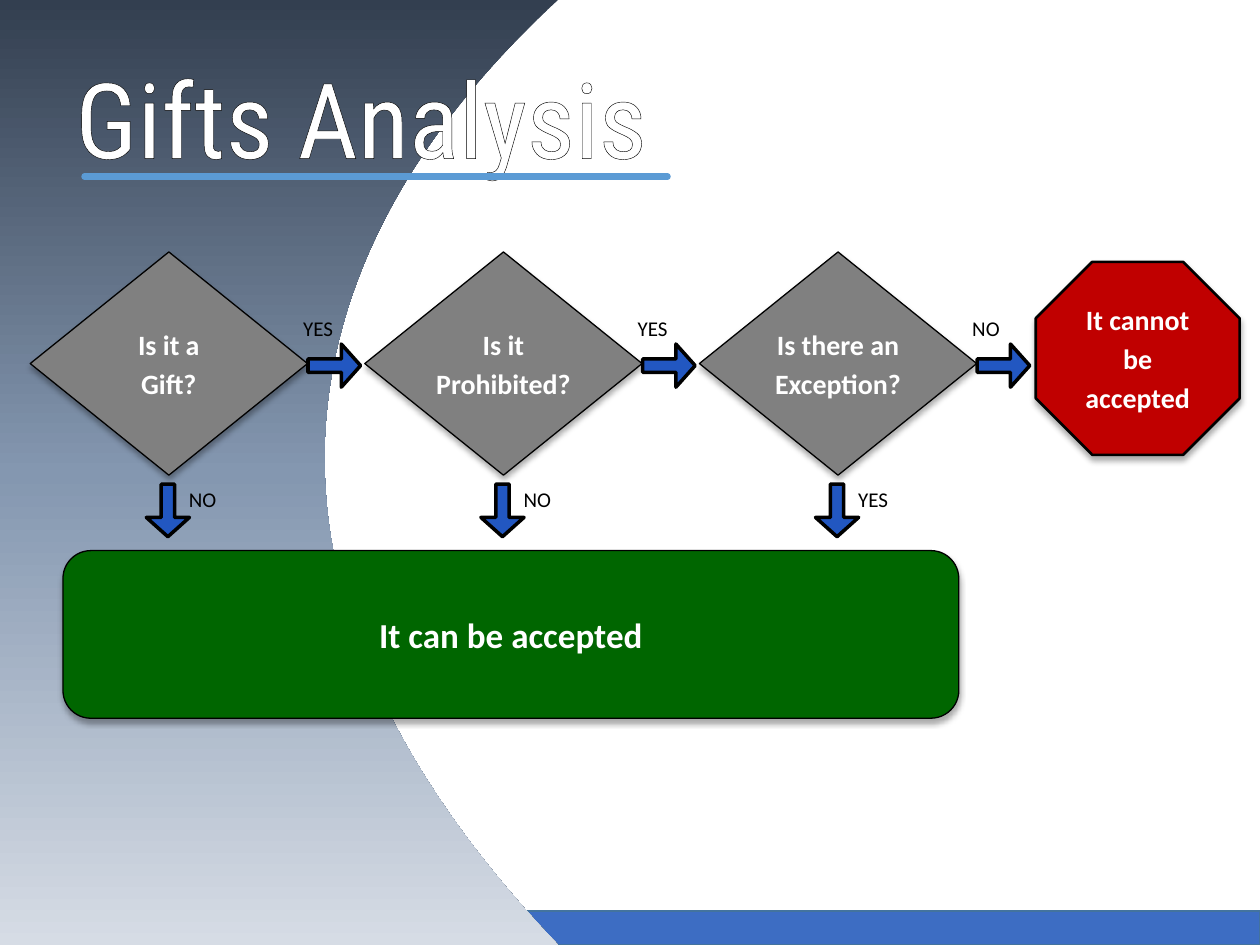
from dataclasses import dataclass

from lxml.etree import SubElement
from pptx import Presentation
from pptx.dml.color import RGBColor
from pptx.enum.shapes import MSO_CONNECTOR, MSO_SHAPE
from pptx.enum.text import MSO_ANCHOR, PP_ALIGN
from pptx.oxml import parse_xml
from pptx.oxml.ns import nsdecls, qn
from pptx.util import Cm, Pt


@dataclass(frozen=True)
class Theme:
    white: str = "FFFFFF"
    black: str = "000000"
    gray: str = "808080"
    red: str = "C00000"
    green: str = "006600"
    arrow: str = "2257C1"
    band: str = "3D6DC3"
    band_line: str = "43739E"
    rule: str = "5B9BD5"
    sweep: tuple = ((0, "333F50"), (50, "8497B0"), (100, "D6DCE5"))
    body_font: str = "Calibri"
    title_font: str = "Roboto Condensed"
    title: int = 60
    result: int = 20
    step: int = 16
    label: int = 12


T = Theme()
STEPS = [  # question, answer leading right, answer leading down
    ("Is it a\nGift?", "YES", "NO"),
    ("Is it\nProhibited?", "YES", "NO"),
    ("Is there an\nException?", "NO", "YES"),
]


def rgb(value):
    return RGBColor.from_string(value)


def paint(sp, fill, line, width):
    sp.shadow.inherit = False
    sp.fill.solid()
    sp.fill.fore_color.rgb = rgb(fill)
    sp.line.color.rgb = rgb(line)
    sp.line.width = Pt(width)


def add_preset(s, kind, box, fill, line=T.black, width=0.75):
    sp = s.shapes.add_shape(kind, *map(Cm, box))
    paint(sp, fill, line, width)
    return sp


def style_text(tf, size, color, font=T.body_font, bold=None):
    for p in tf.paragraphs:
        for r in p.runs:
            r.font.size, r.font.name, r.font.bold = Pt(size), font, bold
            r.font.color.rgb = rgb(color)


def add_soft_shadow(sp):
    effects = sp.element.spPr.find(qn("a:effectLst"))
    effects.append(parse_xml(
        f'<a:outerShdw {nsdecls("a")} blurRad="{Pt(3.5)}" dist="{Pt(2.2)}" '
        f'dir="5400000" rotWithShape="0"><a:srgbClr val="{T.black}">'
        '<a:alpha val="32000"/></a:srgbClr></a:outerShdw>'))


def add_node(s, kind, box, text, fill, size=T.step, width=0.75):
    """A shadowed flowchart shape with centred bold text."""
    sp = add_preset(s, kind, box, fill, width=width)
    add_soft_shadow(sp)
    tf = sp.text_frame
    tf.text = text
    tf.word_wrap = True
    tf.vertical_anchor = MSO_ANCHOR.MIDDLE
    tf.margin_left = tf.margin_right = tf.margin_top = tf.margin_bottom = 0
    for p in tf.paragraphs:
        p.alignment = PP_ALIGN.CENTER
        p.space_before = Pt(size * 0.2)
    style_text(tf, size, T.white, bold=True)


def add_arrow(s, cx, cy, rotation=0):
    w, h = 0.87, 1.06
    sp = add_preset(s, MSO_SHAPE.DOWN_ARROW, (cx - w / 2, cy - h / 2, w, h),
                    T.arrow, width=2)
    sp.adjustments[0], sp.adjustments[1] = 0.31, 0.446
    sp.rotation = rotation


def add_label(s, x, y, text):
    tf = s.shapes.add_textbox(Cm(x), Cm(y), Cm(1.93), Cm(0.76)).text_frame
    tf.text = text
    tf.word_wrap = True
    style_text(tf, T.label, T.black)


def add_background(s, w, h):
    """Bottom band with a curved gradient sweep on the left."""
    add_preset(s, MSO_SHAPE.RECTANGLE, (0, h - 0.69, w, 0.69),
               T.band, T.band_line, 1)
    curve = ((11.25, 0), (6.02, 4.78), (4.01, 11.46), (11.25, h))
    n = 60
    points = []
    for i in range(n + 1):
        t = i / n
        weights = ((1 - t) ** 3, 3 * t * (1 - t) ** 2, 3 * t * t * (1 - t), t ** 3)
        points.append([Cm(sum(k * pt[axis] for k, pt in zip(weights, curve)))
                       for axis in (0, 1)])
    builder = s.shapes.build_freeform(0, 0)
    builder.add_line_segments(points + [(0, Cm(h))])
    sp = builder.convert_to_shape()
    sp.shadow.inherit = False
    sp.line.fill.background()
    sp.fill.gradient()
    sp.fill.gradient_angle = 270
    stops = sp.element.spPr.find(qn("a:gradFill")).find(qn("a:gsLst"))
    stops.clear()
    for pos, color in T.sweep:
        stop = SubElement(stops, qn("a:gs"), pos=str(pos * 1000))
        SubElement(stop, qn("a:srgbClr"), val=color)


def add_title(s, x, y, w, h, text):
    """Outlined title with a round-ended rule below it."""
    tf = s.shapes.add_textbox(Cm(x), Cm(y), Cm(w), Cm(h)).text_frame
    tf.text = text
    tf.word_wrap = True
    tf.vertical_anchor = MSO_ANCHOR.MIDDLE
    style_text(tf, T.title, T.white, T.title_font)
    tf.paragraphs[0].runs[0].font.fill  # keeps the solid fill after the outline
    tf.paragraphs[0].runs[0].font._element.insert(0, parse_xml(
        f'<a:ln {nsdecls("a")} w="{Pt(0.75)}"><a:solidFill>'
        f'<a:srgbClr val="{T.black}"/></a:solidFill></a:ln>'))
    rule_y = Cm(y + 2.8)
    rule = s.shapes.add_connector(MSO_CONNECTOR.STRAIGHT, Cm(x + 0.43), rule_y,
                                  Cm(x + 12.19), rule_y)
    rule.line.color.rgb = rgb(T.rule)
    rule.line.width = Pt(3.5)
    rule.line._get_or_add_ln().set("cap", "rnd")
    SubElement(rule.element.spPr, qn("a:effectLst"))


def add_flowchart(s, x, y):
    """Three questions in a row, ending in a refusal or an acceptance."""
    w, h, pitch = 5.59, 4.5, 6.745
    for i, (question, right, down) in enumerate(STEPS):
        left = x + i * pitch
        add_node(s, MSO_SHAPE.FLOWCHART_DECISION, (left, y, w, h), question, T.gray)
        add_arrow(s, left + 6.13, y + 2.29, rotation=270)
        add_label(s, left + 5.25, y + 1.16, right)
        add_arrow(s, left + w / 2 - 0.02, y + 5.21)
        add_label(s, left + 2.95, y + 4.6, down)
    add_node(s, MSO_SHAPE.ROUNDED_RECTANGLE, (x + 0.66, y + 6.02, 18.06, 3.38),
             "It can be accepted", T.green, T.result)
    add_node(s, MSO_SHAPE.OCTAGON, (x + 20.27, y + 0.2, 4.11, 3.89),
             "It cannot\nbe\naccepted", T.red, width=1.5)


def main():
    prs = Presentation()
    w, h = 25.4, 19.05
    prs.slide_width, prs.slide_height = Cm(w), Cm(h)
    s = prs.slides.add_slide(prs.slide_layouts[6])
    add_background(s, w, h)
    add_flowchart(s, 0.61, 5.08)
    add_title(s, 1.27, 0.76, 22.86, 3.18, "Gifts Analysis")
    prs.save("out.pptx")


if __name__ == "__main__":
    main()
